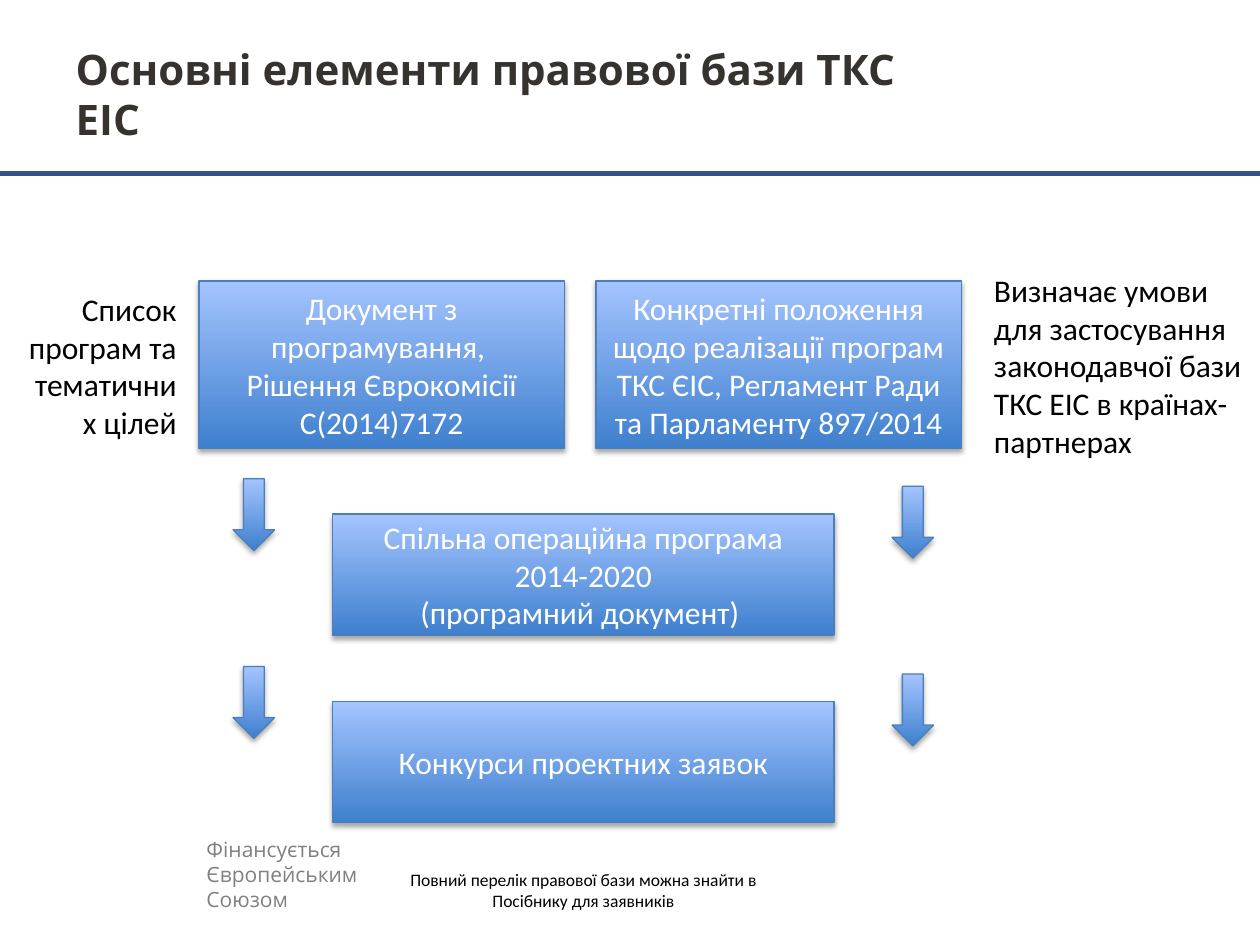
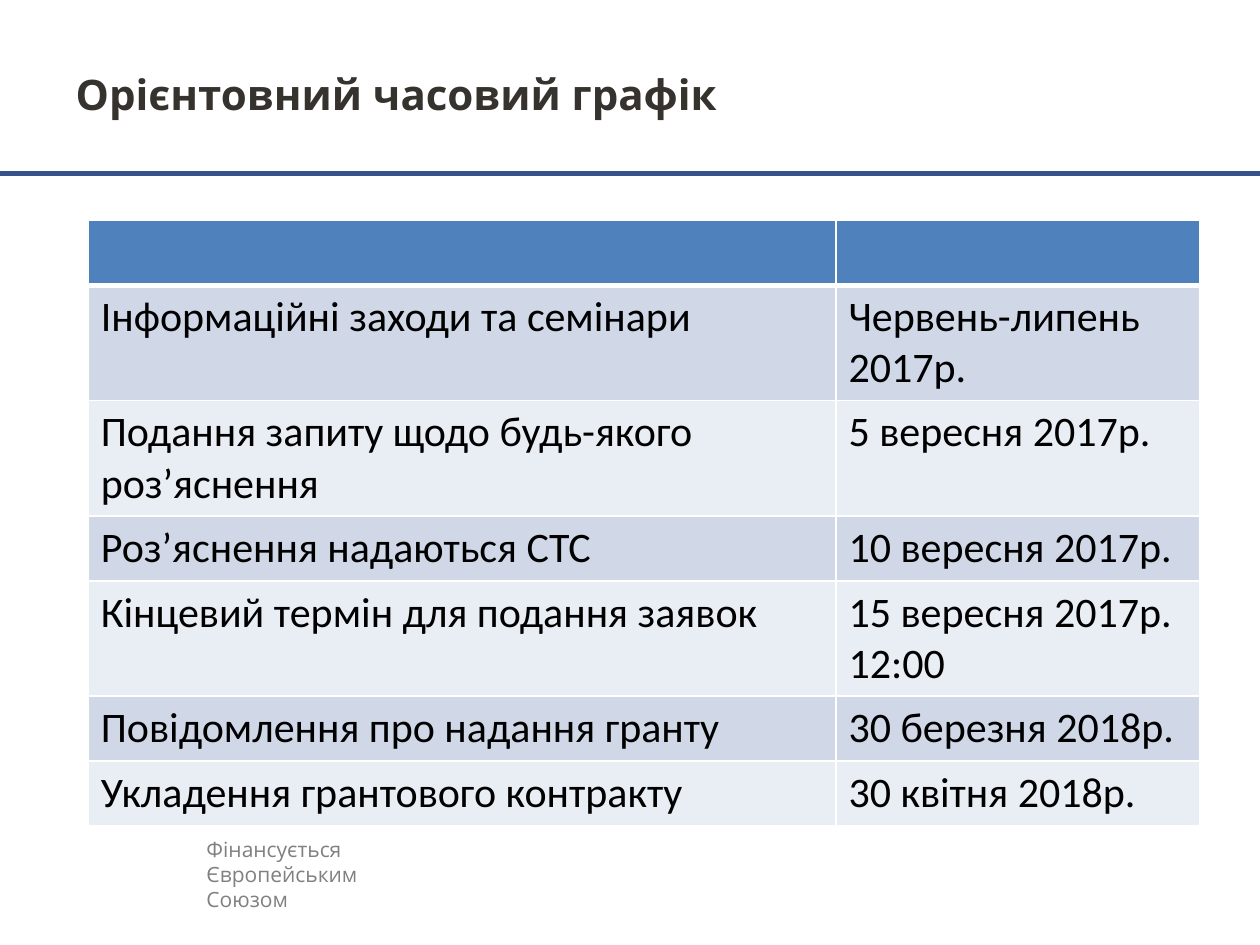
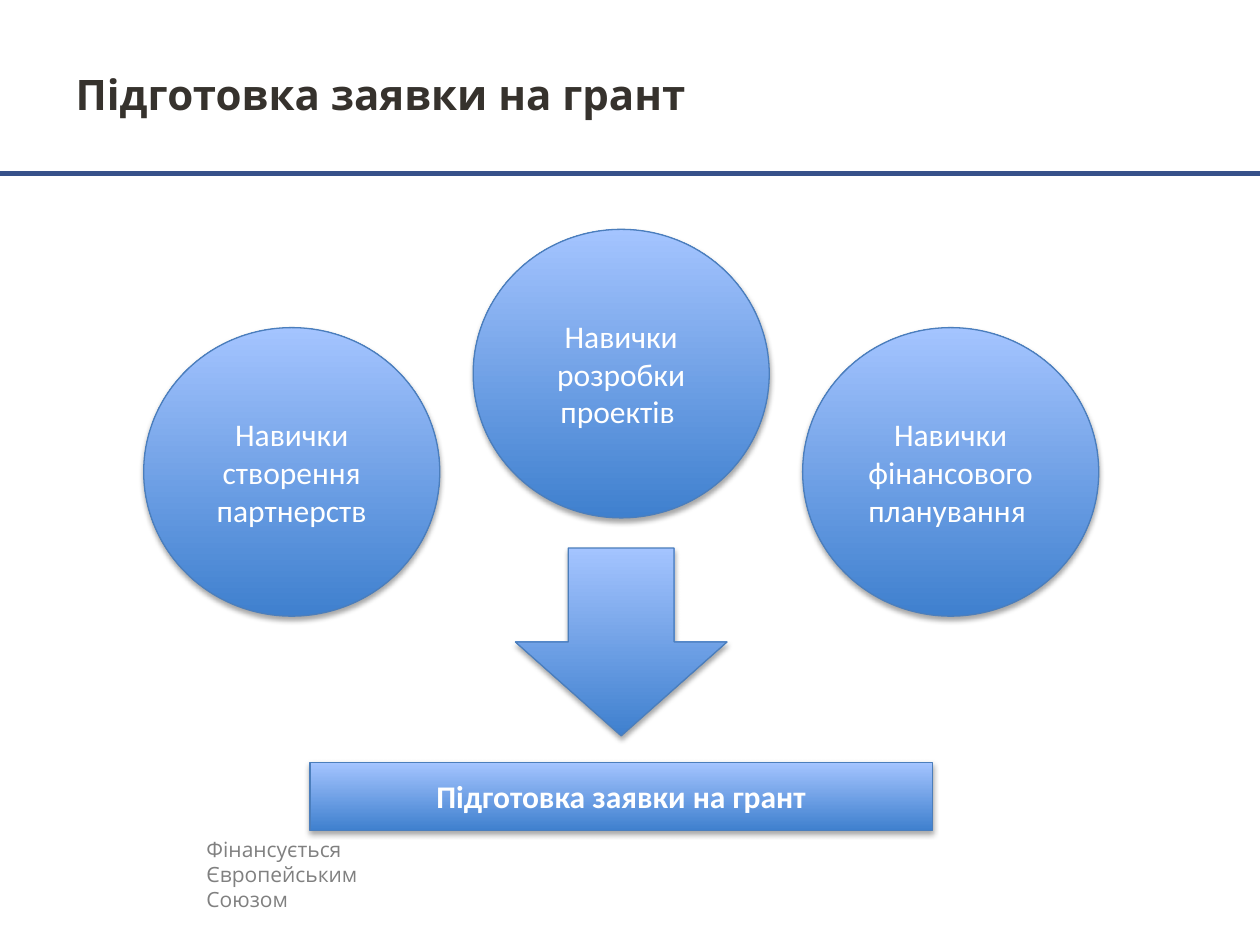
from lxml.etree import SubElement
from pptx import Presentation
from pptx.dml.color import RGBColor
from pptx.enum.shapes import MSO_CONNECTOR, MSO_SHAPE
from pptx.enum.text import MSO_ANCHOR, MSO_AUTO_SIZE, PP_ALIGN
from pptx.oxml import parse_xml
from pptx.oxml.ns import nsdecls, qn
from pptx.util import Inches, Pt

WHITE = RGBColor(0xFF, 0xFF, 0xFF)
BLACK = RGBColor(0, 0, 0)
GRAY = RGBColor(0x80, 0x80, 0x80)
DARK = RGBColor(0x36, 0x32, 0x2D)
NAVY = RGBColor(0x37, 0x51, 0x8A)
EDGE = RGBColor(0x4B, 0x7E, 0xBC)
DEEP = RGBColor(0x3F, 0x80, 0xCE)
PALE = RGBColor(0xA4, 0xC4, 0xFF)
HEAD = RGBColor(0x4F, 0x81, 0xBD)
BANDS = (RGBColor(0xE9, 0xED, 0xF4), RGBColor(0xD0, 0xD8, 0xE8))
HEAVY, THIN = 3, 1
COLS, ROWS = 100, 75
WIDE, HIGH = Inches(10), Inches(7.5)


def put(frame, text, size=18, font="Calibri", color=BLACK, bold=False, align=PP_ALIGN.LEFT):
    lines = [text] if isinstance(text, str) else text
    for i, line in enumerate(lines):
        para = frame.add_paragraph() if i else frame.paragraphs[0]
        para.text = line
        para.alignment = align
        for run in para.runs:
            run.font.size = Pt(size)
            run.font.name = font
            run.font.bold = bold
            run.font.color.rgb = color


class Deck:
    def __init__(self):
        self.file = Presentation()
        self.file.slide_width, self.file.slide_height = WIDE, HIGH
        self.base = self.file.slide_layouts[5]
        title = self.base.placeholders[0]
        title.left, title.top, title.width, title.height = self.area(5, 3.9, 72.9, 7.1)
        self.slide = None

    def area(self, col, row, wide, high):
        return (int(WIDE * col / COLS), int(HIGH * row / ROWS),
                int(WIDE * wide / COLS), int(HIGH * high / ROWS))

    def page(self, title):
        first = self.slide is None
        self.slide = self.file.slides.add_slide(self.base)
        frame = self.slide.shapes.title.text_frame
        frame.word_wrap = True
        frame.auto_size = MSO_AUTO_SIZE.NONE
        frame.vertical_anchor = MSO_ANCHOR.MIDDLE
        put(frame, title, size=24, font="Open Sans", color=DARK, bold=True)
        if first:
            self.share()

    def share(self):
        rule = self.rule(13.8)
        foot = self.note((15.4, 65.9, 18.5, 7.1), "Фінансується Європейським Союзом",
                         size=12, font="Open Sans", color=GRAY)
        for num, item in enumerate((rule, foot), 20):
            for tag in item.element.iter(qn("p:cNvPr")):
                tag.set("id", str(num))
            self.base.shapes.element.append(item.element)

    def rule(self, row):
        left, top, wide, _ = self.area(0, row, COLS, 0)
        line = self.slide.shapes.add_connector(MSO_CONNECTOR.STRAIGHT, left, top, left + wide, top)
        line.line.color.rgb = NAVY
        line.line.width = Pt(3)
        SubElement(line.element.spPr, qn("a:effectLst"))
        return line

    def note(self, spot, text, **style):
        box = self.slide.shapes.add_textbox(*self.area(*spot))
        box.text_frame.word_wrap = True
        box.text_frame.auto_size = MSO_AUTO_SIZE.SHAPE_TO_FIT_TEXT
        put(box.text_frame, text, **style)
        return box

    def shape(self, spot, text="", kind=MSO_SHAPE.RECTANGLE, bold=False):
        item = self.slide.shapes.add_shape(kind, *self.area(*spot))
        item.fill.gradient()
        item.fill.gradient_angle = 90
        for stop, color in zip(item.fill.gradient_stops, (DEEP, PALE)):
            stop.color.rgb = color
        item.line.color.rgb = EDGE
        item.line.width = Pt(0.75)
        item.shadow.inherit = False
        item.element.spPr.find(qn("a:effectLst")).append(parse_xml(
            f'<a:outerShdw {nsdecls("a")} blurRad="{Pt(3.1)}" dist="{Pt(1.8)}" dir="5400000" '
            'rotWithShape="0"><a:srgbClr val="000000"><a:alpha val="35000"/></a:srgbClr></a:outerShdw>'))
        if text:
            item.text_frame.word_wrap = True
            item.text_frame.vertical_anchor = MSO_ANCHOR.MIDDLE
            put(item.text_frame, text, color=WHITE, bold=bold, align=PP_ALIGN.CENTER)

    def arrow(self, spot):
        self.shape(spot, kind=MSO_SHAPE.DOWN_ARROW)

    def table(self, spot, cols, rows, data):
        grid = self.slide.shapes.add_table(len(data), len(cols), *self.area(*spot)).table
        for col, wide in zip(grid.columns, cols):
            col.width = self.area(0, 0, wide, 0)[2]
        for r, (high, line) in enumerate(zip(rows, data)):
            grid.rows[r].height = self.area(0, 0, 0, high)[3]
            for c, text in enumerate(line):
                cell = grid.cell(r, c)
                cell.fill.solid()
                cell.fill.fore_color.rgb = BANDS[r % 2] if r else HEAD
                self.edges(cell, HEAVY if r == 1 else THIN, THIN if r else HEAVY)
                if text:
                    put(cell.text_frame, text, size=24)

    def edges(self, cell, top, low):
        props = cell._tc.get_or_add_tcPr()
        for i, (side, wide) in enumerate(zip("LRTB", (THIN, THIN, top, low))):
            props.insert(i, parse_xml(
                f'<a:ln{side} {nsdecls("a")} w="{Pt(wide)}"><a:solidFill>'
                f'<a:srgbClr val="{WHITE}"/></a:solidFill></a:ln{side}>'))


def legal(deck):
    deck.page("Основні елементи правової бази ТКС ЕІС")
    acts = (
        ["Документ з програмування, ", "Рішення Єврокомісії C(2014)7172"],
        "Конкретні положення щодо реалізації програм ТКС ЄІС, Регламент Ради та Парламенту 897/2014",
    )
    for i, text in enumerate(acts):
        deck.shape((15.8 + 31.5 * i, 22.3, 29, 13.3), text)
    deck.note((0.8, 22.5, 14.2, 13.1), "Список програм та тематичних цілей", align=PP_ALIGN.RIGHT)
    deck.note((77.9, 21, 22.1, 16.2),
              "Визначає умови для застосування законодавчої бази ТКС ЕІС в країнах-партнерах")
    steps = ("Спільна операційна програма 2014-2020\n(програмний документ) ",
             "Конкурси проектних заявок")
    for i, text in enumerate(steps):
        drop = 14.9 * i
        deck.shape((26.4, 40.8 + drop, 39.8, 9.6), text)
        for col, row in ((18.5, 38), (70.8, 38.6)):
            deck.arrow((col, row + drop, 3.3, 5.7))
    deck.note((30.8, 68.5, 31, 4.4),
              "Повний перелік правової бази можна знайти в Посібнику для заявників",
              size=10, align=PP_ALIGN.CENTER)


def dates(deck):
    deck.page("Орієнтовний часовий графік")
    one, two = 5.15, 9.15
    deck.table((7, 17.5, 88.2, 48), (59.35, 28.85), (one, two, two, one, two, one, one), (
        ("", ""),
        ("Інформаційні заходи та семінари", "Червень-липень 2017р."),
        ("Подання запиту щодо будь-якого роз’яснення", "5 вересня 2017р."),
        ("Роз’яснення надаються СТС", "10 вересня 2017р."),
        ("Кінцевий термін для подання заявок", "15 вересня 2017р. 12:00"),
        ("Повідомлення про надання гранту", "30 березня 2018р."),
        ("Укладення грантового контракту", "30 квітня 2018р."),
    ))


def skills(deck):
    name = "Підготовка заявки на грант"
    deck.page(name)
    texts = ("Навички створення партнерств", "Навички розробки проектів ",
             "Навички фінансового планування ")
    for i, text in enumerate(texts):
        row = 18.2 if i == 1 else 26
        deck.shape((11.4 + 26.15 * i, row, 23.5, 22.9), text, kind=MSO_SHAPE.OVAL)
    deck.arrow((40.9, 43.5, 16.8, 14.9))
    deck.shape((24.6, 60.5, 49.4, 5.4), name, bold=True)


def main():
    deck = Deck()
    for draw in (legal, dates, skills):
        draw(deck)
    deck.file.save("out.pptx")


if __name__ == "__main__":
    main()
